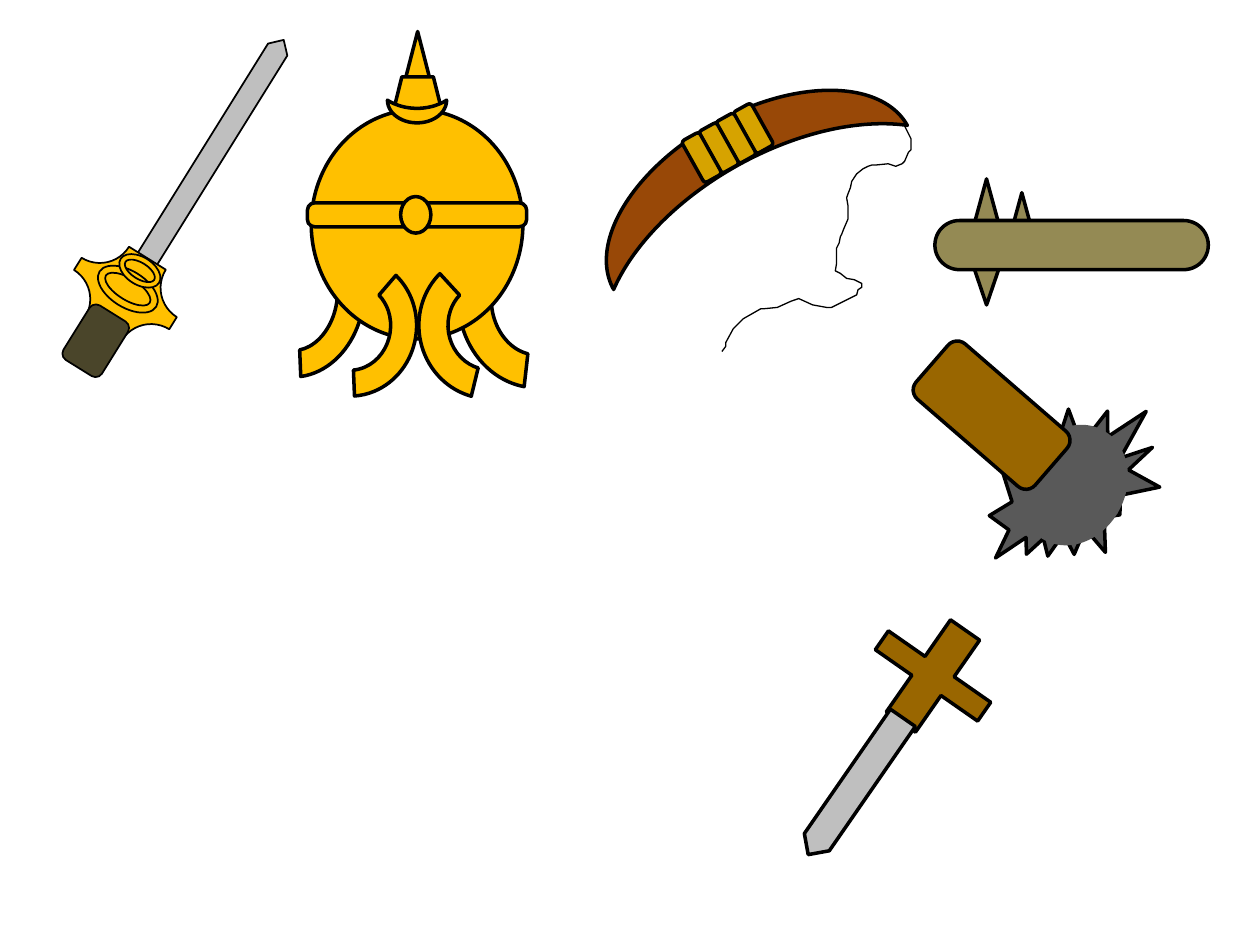
from pptx import Presentation
from pptx import util as u
from pptx.dml.color import RGBColor
from pptx.enum.shapes import MSO_SHAPE as kind

COLORS = {
    "outline": "000000", "stone": "948A54", "wood": "996600", "steel": "BFBFBF",
    "iron": "595959", "gold": "FFC000", "bow": "984807", "binding": "D6A300",
    "handle": "4A452A",
}

presentation = Presentation()
presentation.slide_width, presentation.slide_height = u.Inches(10), u.Inches(7.5)
slide = presentation.slides.add_slide(presentation.slide_layouts[6])
COLUMN = presentation.slide_width / 10
ROW = presentation.slide_height / 7.5


def style(shape, fill, line="outline", weight=2):
    shape.shadow.inherit = False
    if fill:
        shape.fill.solid()
        shape.fill.fore_color.rgb = RGBColor.from_string(COLORS[fill])
    else:
        shape.fill.background()
    shape.line.color.rgb = RGBColor.from_string(COLORS[line])
    shape.line.width = u.Pt(weight)


def draw(group, preset, left, top, width, height, fill,
         turn=0, adjust=(), flip=False, **outline):
    shape = group.shapes.add_shape(
        preset, round(left * COLUMN), round(top * ROW),
        round(width * COLUMN), round(height * ROW))
    shape.rotation = turn
    for index, value in enumerate(adjust):
        shape.adjustments[index] = value
    if flip:
        shape._element.spPr.xfrm.set("flipH", "1")
    style(shape, fill, **outline)


club = slide.shapes.add_group_shape()
for left, top, width, height, turn in [
    (7.71, 1.42, 0.24, 0.44, 0), (7.99, 1.53, 0.24, 0.44, 0), (7.66, 1.92, 0.34, 0.5, 180),
]:
    draw(club, kind.ISOSCELES_TRIANGLE, left, top, width, height, "stone", turn=turn)
draw(club, kind.ROUNDED_RECTANGLE, 7.42, 1.75, 2.17, 0.39, "stone", adjust=[0.5])

dagger = slide.shapes.add_group_shape()
draw(dagger, kind.CROSS, 6.91, 4.92, 0.99, 0.89, "wood", turn=34.9, adjust=[0.398])
draw(dagger, kind.PENTAGON, 6.13, 6.12, 1.32, 0.24, "steel", turn=124.7)

mace = slide.shapes.add_group_shape()
draw(mace, kind.EXPLOSION2, 7.96, 3.08, 1.17, 1.58, "iron", turn=27.1)
draw(mace, kind.OVAL, 8.12, 3.37, 0.8, 0.96, "iron", turn=27.1, line="iron")
draw(mace, kind.ROUNDED_RECTANGLE, 7.58, 2.67, 0.58, 1.25, "wood", turn=310.9)

helmet = slide.shapes.add_group_shape()
draw(helmet, kind.ISOSCELES_TRIANGLE, 3.08, 0.25, 0.47, 0.91, "gold")
draw(helmet, kind.TRAPEZOID, 3.08, 0.61, 0.47, 0.44, "gold")
draw(helmet, kind.BLOCK_ARC, 3.56, 1.81, 1.35, 1.19, "gold",
     turn=261, adjust=[114.58, 206.74, 0.22], flip=True)
draw(helmet, kind.BLOCK_ARC, 1.72, 1.83, 1.28, 1.05, "gold",
     turn=99, adjust=[114.65, 209.15, 0.2])
draw(helmet, kind.OVAL, 2.47, 0.87, 1.68, 1.82, "gold")
draw(helmet, kind.BLOCK_ARC, 2.24, 2.08, 1.1, 1.03, "gold",
     turn=99, adjust=[127, 209.15, 0.2])
draw(helmet, kind.BLOCK_ARC, 3.3, 2.04, 1.15, 1.1, "gold",
     turn=261, adjust=[128.15, 202.44, 0.21], flip=True)
draw(helmet, kind.ROUNDED_RECTANGLE, 2.44, 1.61, 1.74, 0.19, "gold", adjust=[0.308])
draw(helmet, kind.OVAL, 3.18, 1.56, 0.24, 0.29, "gold")
draw(helmet, kind.MOON, 3.22, 0.65, 0.18, 0.47, "gold", turn=270, adjust=[0.641])

bow = slide.shapes.add_group_shape()
draw(bow, kind.MOON, 5.47, -0.02, 0.76, 2.67, "bow", turn=60.8)
for band in range(4):
    draw(bow, kind.ROUNDED_RECTANGLE, 5.79 - band * 0.137, 0.94 + band * 0.077,
         0.38, 0.16, "binding", turn=60.8)

STRING_POINTS = [
    (717, 98), (723, 110), (723, 119), (721, 121), (718, 128), (716, 130), (711, 132),
    (708, 131), (705, 130), (695, 131), (692, 131), (689, 132), (685, 134), (680, 138),
    (676, 144), (675, 149), (673, 154), (672, 157), (673, 163), (673, 168), (673, 174),
    (670, 181), (668, 186), (667, 188), (666, 193), (664, 197), (664, 209), (663, 215),
    (667, 217), (672, 221), (678, 222), (682, 224), (684, 225), (684, 228), (681, 230),
    (680, 234), (670, 239), (660, 244), (656, 244), (645, 242), (634, 237), (628, 239),
    (617, 244), (607, 245), (604, 245), (590, 253), (584, 259), (582, 261), (576, 272),
    (576, 275), (573, 279),
]
builder = bow.shapes.build_freeform(*STRING_POINTS[0], scale=COLUMN / 100)
builder.add_line_segments(STRING_POINTS[1:], close=False)
style(builder.convert_to_shape(), None, weight=0.75)

sword = slide.shapes.add_group_shape()
for preset, left, top, width, height, fill, turn, adjust in [
    (kind.PENTAGON, 0.41, 1.25, 2.41, 0.18, "steel", 301.9, []),
    (kind.PLAQUE, 0.55, 2, 0.89, 0.66, "gold", 31.9, [0.414]),
    (kind.ROUNDED_RECTANGLE, 0.58, 2.45, 0.36, 0.51, "handle", 31.9, []),
    (kind.DONUT, 0.75, 2.15, 0.53, 0.29, "gold", 31.9, [0.206]),
    (kind.DONUT, 0.93, 2.04, 0.36, 0.22, "gold", 31.9, [0.206]),
]:
    draw(sword, preset, left, top, width, height, fill, turn=turn, adjust=adjust, weight=1)

presentation.save("out.pptx")
